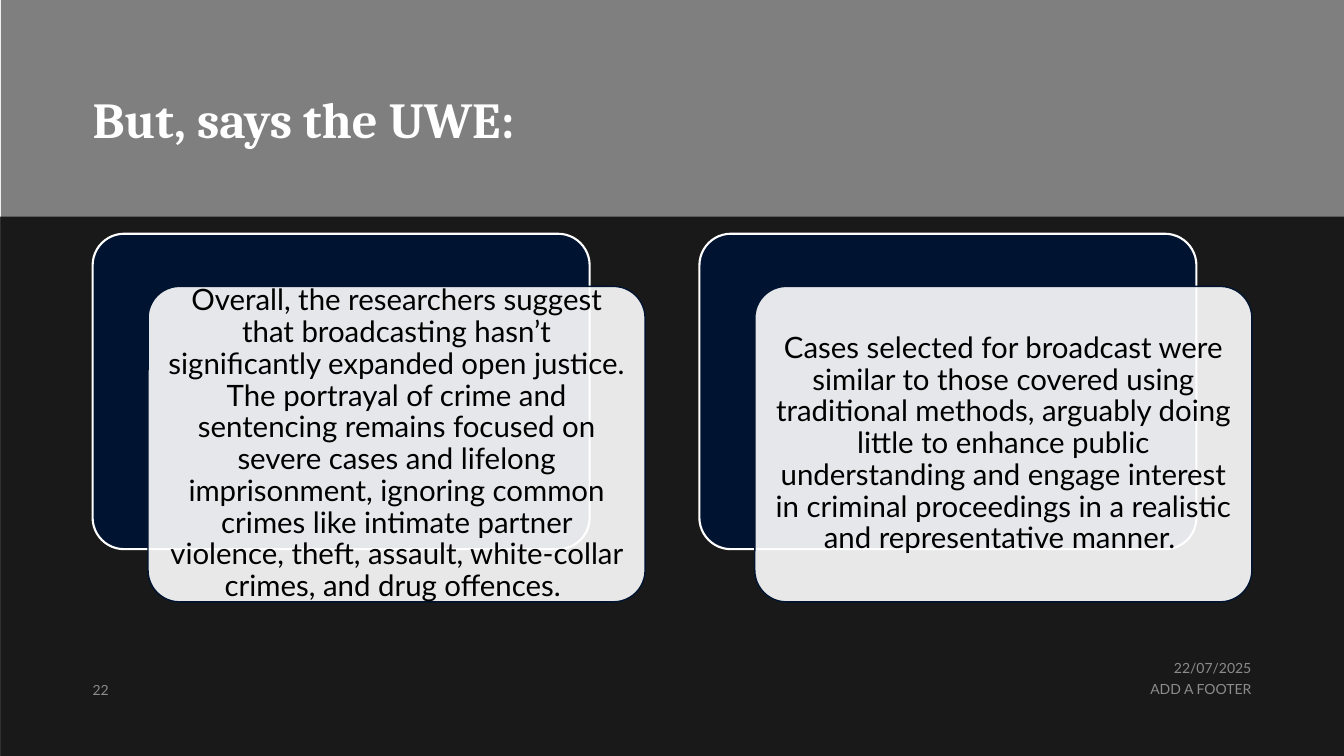
from lxml import etree
from pptx import Presentation
from pptx.dml.color import RGBColor
from pptx.enum.shapes import MSO_SHAPE
from pptx.enum.text import MSO_ANCHOR, PP_ALIGN
from pptx.oxml.ns import qn
from pptx.util import Pt

RECT, ROUND = MSO_SHAPE.RECTANGLE, MSO_SHAPE.ROUNDED_RECTANGLE
TOP, MIDDLE, BOTTOM = MSO_ANCHOR.TOP, MSO_ANCHOR.MIDDLE, MSO_ANCHOR.BOTTOM
LEFT, CENTER, RIGHT = PP_ALIGN.LEFT, PP_ALIGN.CENTER, PP_ALIGN.RIGHT

COLORS = {"black": "000000", "white": "FFFFFF", "navy": "001431", "gray": "D9D9D9"}
WIDTH, HEIGHT = 960, 540
MARGIN = 66.2
CARD_TOP, CARD_WIDTH, CARD_HEIGHT = 167, 355, 225.3
CARD_STEP = 433.4
SHIFT_X, SHIFT_Y = 39.6, 37.6
INSET = 6.8

CARDS = [
    "Overall, the researchers suggest that broadcasting hasn’t significantly "
    "expanded open justice. The portrayal of crime and sentencing remains focused "
    "on severe cases and lifelong imprisonment, ignoring common crimes like "
    "intimate partner violence, theft, assault, white-collar crimes, and drug "
    "offences. ",
    "Cases selected for broadcast were similar to those covered using traditional "
    "methods, arguably doing little to enhance public understanding and engage "
    "interest in criminal proceedings in a realistic and representative manner. ",
]


def paint(fill, color, alpha=100):
    fill.solid()
    fill.fore_color.rgb = RGBColor.from_string(COLORS[color])
    if alpha < 100:
        tint = fill._xPr.find(qn("a:solidFill"))[0]
        etree.SubElement(tint, qn("a:alpha")).set("val", str(alpha * 1000))


def add_panel(slide, kind, box, color, alpha=100, line=None, weight=1):
    panel = slide.shapes.add_shape(kind, *map(Pt, box))
    panel.shadow.inherit = False
    paint(panel.fill, color, alpha)
    if kind == ROUND:
        panel.adjustments[0] = 0.1
    if line:
        paint(panel.line.fill, line)
        panel.line.width = Pt(weight)
    else:
        panel.line.fill.background()


def add_text(slide, text, box, size=10, font="Lato", color="gray", alpha=100,
             bold=False, align=LEFT, anchor=TOP, inset=0, spacing=1, after=0):
    frame = slide.shapes.add_textbox(*map(Pt, box)).text_frame
    frame.word_wrap = True
    frame.vertical_anchor = anchor
    frame.margin_left = frame.margin_right = Pt(inset)
    frame.margin_top = frame.margin_bottom = Pt(inset)
    para = frame.paragraphs[0]
    para.alignment = align
    para.line_spacing = spacing
    para.space_after = Pt(after)
    run = para.add_run()
    run.text = text
    run.font.name = font
    run.font.size = Pt(size)
    run.font.bold = bold
    paint(run.font.fill, color, alpha)


def add_card(slide, text, left):
    add_panel(slide, ROUND, (left, CARD_TOP, CARD_WIDTH, CARD_HEIGHT),
              "navy", line="white", weight=1.5)
    left, top = left + SHIFT_X, CARD_TOP + SHIFT_Y
    add_panel(slide, ROUND, (left, top, CARD_WIDTH, CARD_HEIGHT),
              "white", alpha=90, line="navy")
    box = (left + INSET, top + INSET, CARD_WIDTH - 2 * INSET, CARD_HEIGHT - 2 * INSET)
    add_text(slide, text, box, size=21, color="black", align=CENTER,
             anchor=MIDDLE, inset=6.3, spacing=0.9, after=7.35)


def main():
    deck = Presentation()
    deck.slide_width, deck.slide_height = Pt(WIDTH), Pt(HEIGHT)
    slide = deck.slides.add_slide(deck.slide_layouts[6])
    paint(slide.background.fill, "white")
    add_panel(slide, RECT, (0.7, 0, WIDTH, HEIGHT), "black", alpha=50)
    add_panel(slide, RECT, (0, 154.8, WIDTH, 385.2), "black", alpha=80)
    add_text(slide, "But, says the UWE:", (MARGIN, 63.4, 540, 43.2), size=36,
             font="Cambria", color="white", bold=True, anchor=BOTTOM, spacing=0.9)
    add_text(slide, "22/07/2025", (677.8, 472.3, 216, 11.5), alpha=60,
             align=RIGHT, spacing=0.9, after=6)
    add_text(slide, "ADD A FOOTER", (569.8, 486, 324, 15.1), alpha=60,
             align=RIGHT, after=6)
    add_text(slide, "22", (MARGIN, 484.6, 36, 14.4), alpha=60, anchor=BOTTOM, after=6)
    for index, text in enumerate(CARDS):
        add_card(slide, text, MARGIN + index * CARD_STEP)
    deck.save("out.pptx")


if __name__ == "__main__":
    main()
